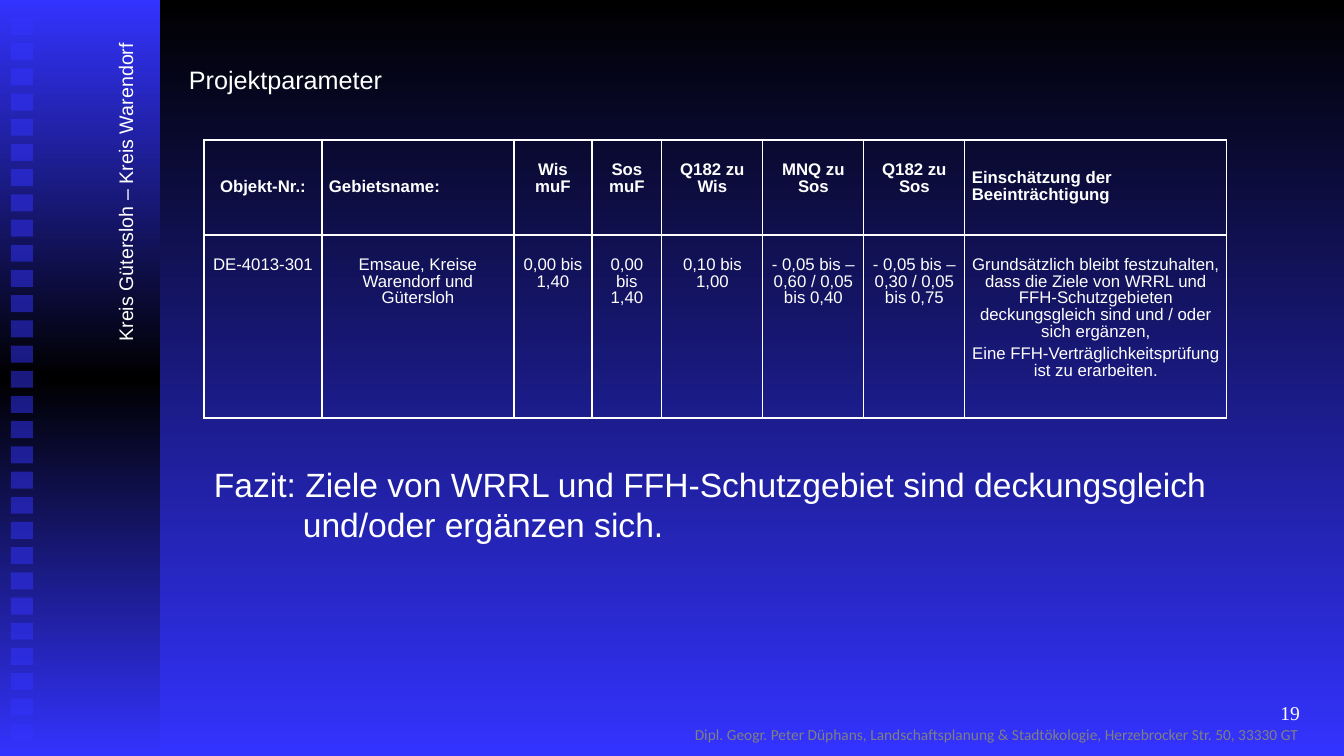
from lxml.etree import SubElement
from pptx import Presentation
from pptx.dml.color import RGBColor
from pptx.enum.shapes import MSO_SHAPE
from pptx.enum.text import MSO_ANCHOR, PP_ALIGN
from pptx.oxml.ns import qn
from pptx.util import Pt

WHITE, BLUE, BLACK, GREY = "FFFFFF", "3333FF", "000000", "808080"
LEFT, CENTER, RIGHT = PP_ALIGN.LEFT, PP_ALIGN.CENTER, PP_ALIGN.RIGHT
TOP, MIDDLE = MSO_ANCHOR.TOP, MSO_ANCHOR.MIDDLE

PAGE_SIZE = (1344, 756)
BAND = (0, 0, 160, 756)
SQUARE = {"left": 11, "top": 18, "width": 22, "height": 17, "pitch": 25.2, "count": 29}

TEXTS = [
    {"text": "Dipl. Geogr. Peter Düphans, Landschaftsplanung & Stadtökologie, "
             "Herzebrocker Str. 50, 33330 GT",
     "at": (650, 709, 694, 50), "size": 11, "font": "Calibri", "color": GREY,
     "align": CENTER, "anchor": MIDDLE},
    {"text": "Kreis Gütersloh – Kreis Warendorf",
     "at": (-49, 160, 349, 34), "size": 14, "rotation": 270},
    {"text": "Fazit: Ziele von WRRL und FFH-Schutzgebiet sind deckungsgleich "
             "und/oder ergänzen sich.",
     "at": (204, 459, 1040, 132), "size": 24, "hanging": 89},
    {"text": "19", "at": (1030, 688, 280, 50), "size": 14,
     "font": "Times New Roman", "align": RIGHT, "anchor": MIDDLE},
    {"text": "Projektparameter", "at": (179, 59, 270, 40), "size": 18},
]

TABLE_LEFT, TABLE_TOP = 204, 140
COLUMN_WIDTHS = [118, 192, 78, 70, 101, 101, 101, 262]
ROW_HEIGHTS = [95, 183]
CELL_SIDE, CELL_TOP = 7, 22
HEADERS = ["Objekt-Nr.:", "Gebietsname:", "Wis muF", "Sos muF", "Q182 zu Wis",
           "MNQ zu Sos", "Q182 zu Sos", "Einschätzung der Beeinträchtigung"]
VALUES = ["DE-4013-301", "Emsaue, Kreise Warendorf und Gütersloh", "0,00 bis 1,40",
          "0,00 bis 1,40", "0,10 bis 1,00", "- 0,05 bis – 0,60 / 0,05 bis 0,40",
          "- 0,05 bis – 0,30 / 0,05 bis 0,75",
          "Grundsätzlich bleibt festzuhalten, dass die Ziele von WRRL und "
          "FFH-Schutzgebieten deckungsgleich sind und / oder sich ergänzen,\n"
          "Eine FFH-Verträglichkeitsprüfung ist zu erarbeiten."]
MIDDLE_HEADERS = {0: CENTER, 1: LEFT, 7: LEFT}


def px(length):
    return round(length * 914400 / 100.8)


def rgb(value):
    return RGBColor.from_string(value)


def set_all(target, values):
    for name, value in values.items():
        setattr(target, name, value)


def set_gradient(owner, fill, colors):
    fill.gradient()
    fill.gradient_angle = 270
    stops = next(owner.element.iter(qn("a:gsLst")))
    for stop in list(stops):
        stops.remove(stop)
    for index, color in enumerate(colors):
        position = index * 100000 // (len(colors) - 1)
        stop = SubElement(stops, qn("a:gs"), pos=str(position))
        SubElement(stop, qn("a:srgbClr"), val=color)


def add_rectangle(page, at):
    shape = page.shapes.add_shape(MSO_SHAPE.RECTANGLE, *map(px, at))
    shape.shadow.inherit = False
    shape.line.fill.background()
    return shape


def write(para, text, size, font="Arial", color=WHITE, bold=False):
    span = para.add_run()
    span.text = text
    set_all(span.font, {"size": Pt(size), "name": font, "bold": bold})
    span.font.color.rgb = rgb(color)


def add_text(page, item):
    box = page.shapes.add_textbox(*map(px, item["at"]))
    box.rotation = item.get("rotation", 0)
    frame = box.text_frame
    set_all(frame, {"word_wrap": True, "vertical_anchor": item.get("anchor", TOP)})
    para = frame.paragraphs[0]
    para.alignment = item.get("align", LEFT)
    if "hanging" in item:
        indent = px(item["hanging"])
        properties = para._p.get_or_add_pPr()
        properties.set("marL", str(indent))
        properties.set("indent", str(-indent))
    write(para, item["text"], item["size"], item.get("font", "Arial"),
          item.get("color", WHITE))


def add_borders(cell):
    properties = cell._tc.get_or_add_tcPr()
    for index, side in enumerate(("a:lnL", "a:lnR", "a:lnT", "a:lnB")):
        line = SubElement(properties, qn(side), w=str(Pt(1)))
        fill = SubElement(line, qn("a:solidFill"))
        SubElement(fill, qn("a:srgbClr"), val=WHITE)
        properties.insert(index, line)


def fill_cell(cell, text, bold, align, anchor):
    cell.fill.background()
    add_borders(cell)
    set_all(cell, {"margin_left": px(CELL_SIDE), "margin_right": px(CELL_SIDE),
                   "margin_top": px(CELL_TOP) if anchor == TOP else 0,
                   "margin_bottom": 0, "vertical_anchor": anchor})
    frame = cell.text_frame
    for index, line in enumerate(text.split("\n")):
        para = frame.add_paragraph() if index else frame.paragraphs[0]
        set_all(para, {"alignment": align, "line_spacing": Pt(12),
                       "space_before": Pt(2 if index else 0), "space_after": Pt(2)})
        write(para, line, 12, bold=bold)


def add_parameter_table(page):
    frame = page.shapes.add_table(
        len(ROW_HEIGHTS), len(COLUMN_WIDTHS), px(TABLE_LEFT), px(TABLE_TOP),
        px(sum(COLUMN_WIDTHS)), px(sum(ROW_HEIGHTS)))
    table = frame.table
    set_all(table, {"first_row": False, "horz_banding": False})
    for column, width in zip(table.columns, COLUMN_WIDTHS):
        column.width = px(width)
    for row, height in zip(table.rows, ROW_HEIGHTS):
        row.height = px(height)
    for index, (header, value) in enumerate(zip(HEADERS, VALUES)):
        anchor = MIDDLE if index in MIDDLE_HEADERS else TOP
        align = MIDDLE_HEADERS.get(index, CENTER)
        fill_cell(table.cell(0, index), header, True, align, anchor)
        fill_cell(table.cell(1, index), value, False, CENTER, TOP)


def add_side_band(page):
    band = add_rectangle(page, BAND)
    set_gradient(band, band.fill, [BLUE, BLACK, BLUE])
    for index in range(SQUARE["count"]):
        top = SQUARE["top"] + index * SQUARE["pitch"]
        square = add_rectangle(
            page, (SQUARE["left"], top, SQUARE["width"], SQUARE["height"]))
        square.fill.solid()
        square.fill.fore_color.rgb = rgb(BLUE)
        color = next(square.element.spPr.iter(qn("a:srgbClr")))
        SubElement(color, qn("a:alpha"), val="50000")


def main():
    deck = Presentation()
    deck.slide_width, deck.slide_height = map(px, PAGE_SIZE)
    page = deck.slides.add_slide(deck.slide_layouts[6])
    set_gradient(page, page.background.fill, [BLACK, BLUE])
    add_side_band(page)
    for item in TEXTS:
        add_text(page, item)
    add_parameter_table(page)
    deck.save("out.pptx")


if __name__ == "__main__":
    main()
